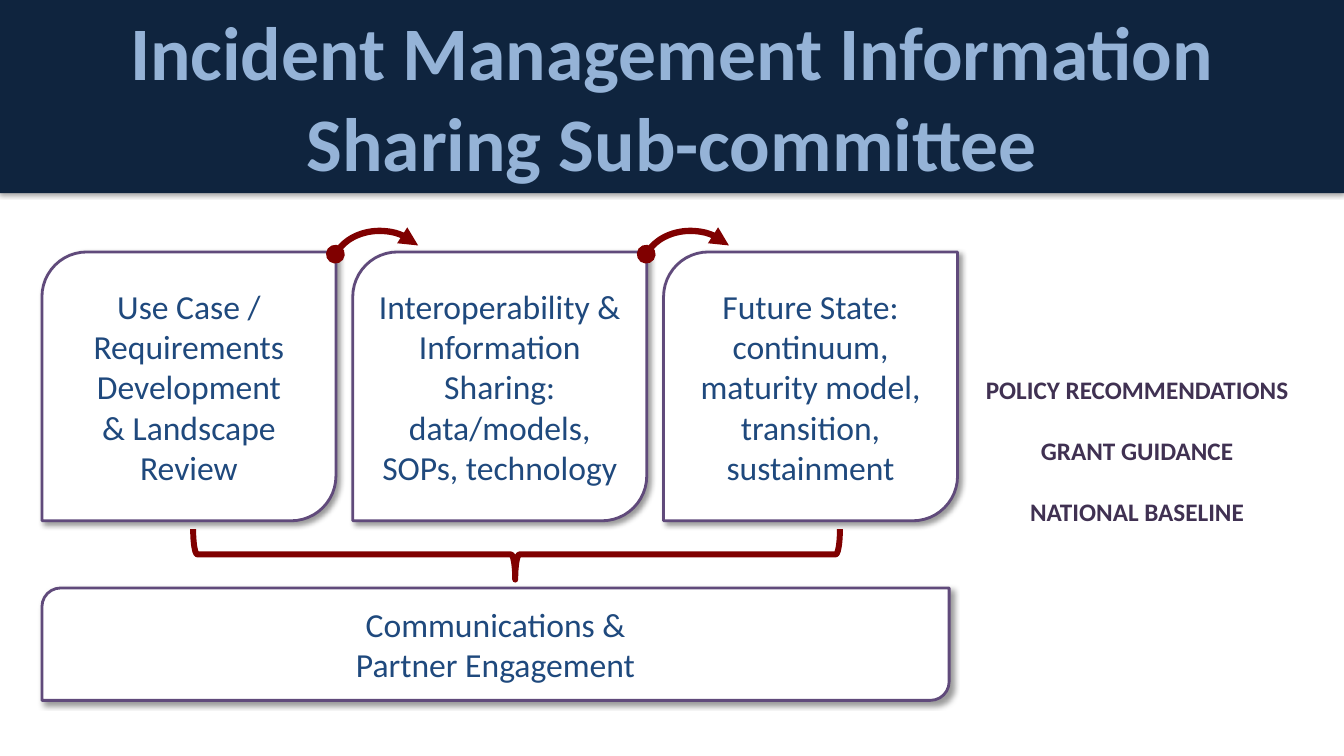
import lxml.etree
import pptx
import pptx.dml.color
import pptx.enum.shapes
import pptx.enum.text
import pptx.oxml.ns
import pptx.util

SHAPE = pptx.enum.shapes.MSO_SHAPE
ANCHOR = pptx.enum.text.MSO_ANCHOR
FIT = pptx.enum.text.MSO_AUTO_SIZE
EMU_PER_PX = 9525
STEP = 296


def rgb(value):
    """Turn a hex string into a colour."""
    return pptx.dml.color.RGBColor.from_string(value)


def child(parent, tag, **attributes):
    """Append a drawing element to its parent."""
    return lxml.etree.SubElement(parent, pptx.oxml.ns.qn(tag), attributes)


class Deck:
    """Hold the style and the current slide."""

    fonts = {
        "title": {"size": 54, "bold": True, "color": "95B3D7"},
        "box": {"size": 24, "bold": False, "color": "1F497D"},
        "outcome": {"size": 18, "bold": True, "color": "403152"},
    }

    def __init__(self, width, height):
        """Start a deck with one titled slide."""
        self.prs = pptx.Presentation()
        self.prs.slide_width, self.prs.slide_height = self.px(width, height)
        self.s = self.prs.slides.add_slide(self.prs.slide_layouts[5])

    def px(self, *lengths):
        """Scale pixel lengths to EMU."""
        return [pptx.util.Emu(n * EMU_PER_PX) for n in lengths]

    def text(self, sp, lines, style, gap=0, **frame):
        """Fill a shape with centred paragraphs."""
        tf = sp.text_frame
        for name, value in frame.items():
            setattr(tf, name, value)
        look = self.fonts[style]
        for i, line in enumerate(lines):
            p = tf.add_paragraph() if i else tf.paragraphs[0]
            p.alignment = pptx.enum.text.PP_ALIGN.CENTER
            p.space_before = pptx.util.Pt(gap if i else 0)
            r = p.add_run()
            r.text = line
            values = {"name": "Calibri", "size": pptx.util.Pt(look["size"]), "bold": look["bold"]}
            for name, value in values.items():
                setattr(r.font, name, value)
            r.font.color.rgb = rgb(look["color"])

    def shape(self, kind, at, fill=None, line=None, weight=0, rotation=0, adjust=()):
        """Add a preset shape without a shadow."""
        sp = self.s.shapes.add_shape(kind, *self.px(*at))
        sp.shadow.inherit = False
        sp.rotation = rotation
        for i, value in enumerate(adjust):
            sp.adjustments[i] = value
        if fill:
            sp.fill.solid()
            sp.fill.fore_color.rgb = rgb(fill)
        else:
            sp.fill.background()
        if line:
            sp.line.color.rgb = rgb(line)
            sp.line.width = pptx.util.Pt(weight)
        else:
            sp.line.fill.background()
        return sp

    def shadow(self, sp, opacity, blur, distance, angle):
        """Give a shape a soft black outer shadow."""
        effects = sp.element.spPr.find(pptx.oxml.ns.qn("a:effectLst"))
        outer = child(effects, "a:outerShdw", blurRad=str(pptx.util.Pt(blur)),
                      dist=str(pptx.util.Pt(distance)), dir=str(angle * 60000),
                      algn="tl", rotWithShape="0")
        black = child(outer, "a:srgbClr", val="000000")
        child(black, "a:alpha", val=str(opacity * 1000))

    def title(self, text, at):
        """Place the title on a dark band."""
        sp = self.s.shapes.title
        sp.left, sp.top, sp.width, sp.height = self.px(*at)
        self.text(sp, [text], "title", vertical_anchor=ANCHOR.TOP,
                  word_wrap=True, auto_size=FIT.SHAPE_TO_FIT_TEXT)
        band = self.shape(SHAPE.RECTANGLE, at, fill="0F243E")
        self.shadow(band, 35, 3.1, 1.8, 90)
        sp.element.addprevious(band.element)

    def box(self, lines, at):
        """Add a white box with two rounded corners."""
        sp = self.shape(SHAPE.ROUND_2_DIAG_RECTANGLE, at, "FFFFFF", "604A7B", 2)
        self.shadow(sp, 40, 4, 3, 45)
        self.text(sp, lines, "box", vertical_anchor=ANCHOR.MIDDLE, word_wrap=True)

    def arc(self, at):
        """Add a curved arrow that starts with a dot."""
        sp = self.shape(SHAPE.ARC, at, line="800000", weight=4.5,
                        rotation=4.7, adjust=(118.596, 191.26))
        ln = sp.element.spPr.get_or_add_ln()
        child(ln, "a:headEnd", type="oval")
        child(ln, "a:tailEnd", type="triangle")

    def brace(self, at):
        """Add a brace that points down."""
        self.shape(SHAPE.LEFT_BRACE, at, line="800000", weight=4.25,
                   rotation=270, adjust=(0.083, 0.498))

    def outcomes(self, lines, at):
        """Add a list of outcomes set one line apart."""
        sp = self.s.shapes.add_textbox(*self.px(*at))
        self.text(sp, lines, "outcome", gap=22, word_wrap=False,
                  auto_size=FIT.SHAPE_TO_FIT_TEXT)


def main():
    """Build the slide and save it."""
    deck = Deck(1280, 720)
    deck.title("Incident Management Information Sharing Sub-committee", (0, 0, 1280, 184))
    stages = [
        ["Use Case / Requirements Development", "& Landscape Review"],
        ["Interoperability & Information Sharing: data/models, SOPs, technology"],
        ["Future State: continuum, maturity model, transition, sustainment"],
    ]
    for i, lines in enumerate(stages):
        deck.box(lines, (40 + i * STEP, 240, 280, 256))
    deck.box(["Communications &", "Partner Engagement"], (40, 560, 864, 107))
    for i in range(len(stages) - 1):
        deck.arc((315 + i * STEP, 220, 96, 80))
    deck.brace((468, 220, 48, 616))
    deck.outcomes(["POLICY RECOMMENDATIONS", "GRANT GUIDANCE", "NATIONAL BASELINE"],
                  (928, 352, 310, 156))
    deck.prs.save("out.pptx")


if __name__ == "__main__":
    main()
